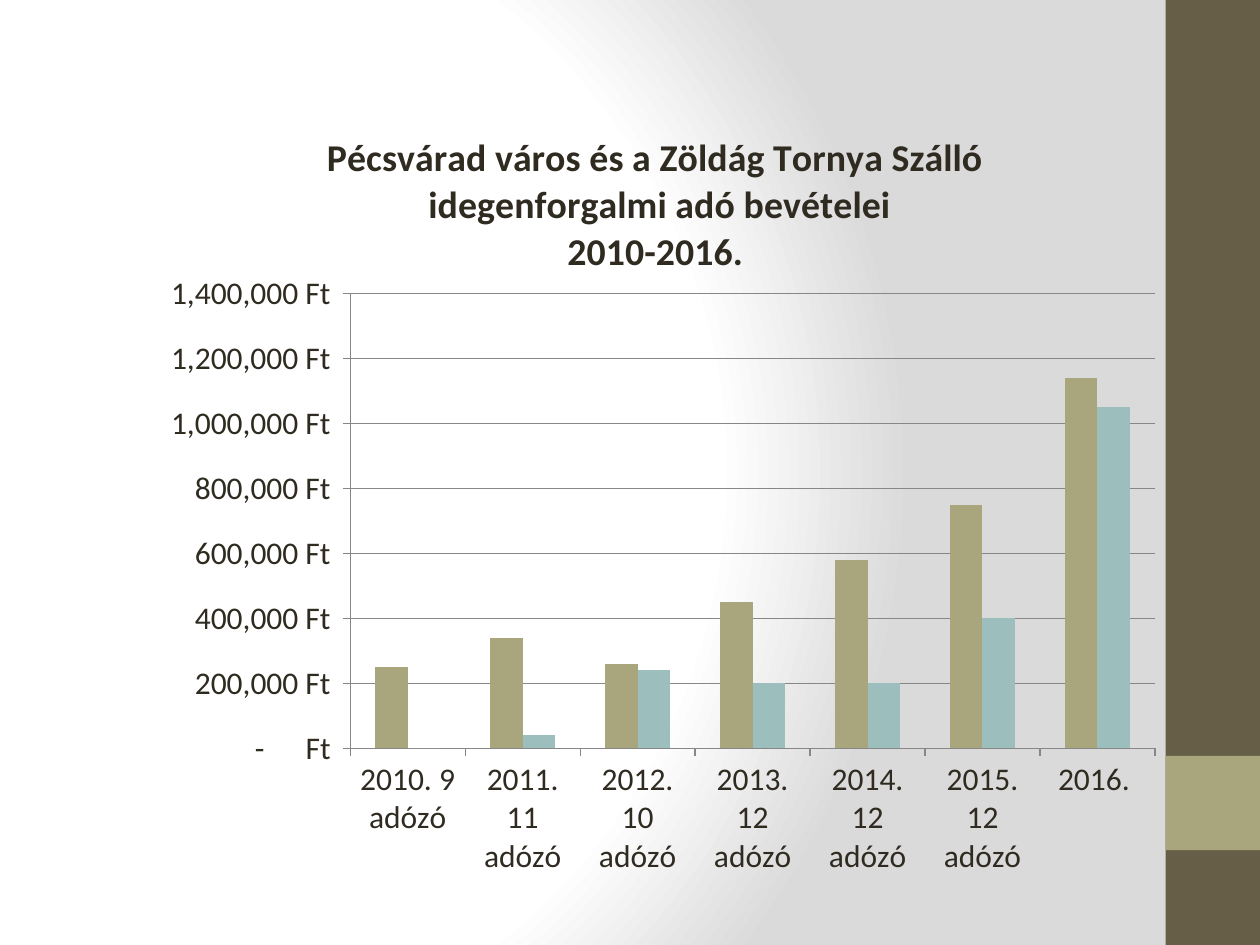
from lxml.etree import SubElement
from pptx import Presentation
from pptx.chart.data import CategoryChartData
from pptx.dml.color import RGBColor
from pptx.enum.chart import XL_CHART_TYPE, XL_TICK_MARK
from pptx.enum.shapes import MSO_SHAPE
from pptx.oxml import parse_xml
from pptx.oxml.ns import nsdecls, qn
from pptx.util import Cm, Pt

COLORS = {
    "text": "2F2B20",
    "band": "675E47",
    "olive": "A9A57C",
    "teal": "9CBEBD",
    "line": "878787",
    "white": "FFFFFF",
    "grey": "DADADA",
}
FT_FORMAT = r'_-* #,##0\ "Ft"_-;\-* #,##0\ "Ft"_-;_-* "-"??\ "Ft"_-;_-@_-'


class Deck:
    """Holds the style and the current slide."""

    font = "Calibri"
    size = Pt(18)
    title_size = Pt(21.6)

    def __init__(self, slide):
        self.s = slide

    def rgb(self, name):
        return RGBColor.from_string(COLORS[name])

    def background(self, stops):
        fill = self.s.background.fill
        fill.gradient()
        old = self.s.element.find(".//" + qn("a:gradFill"))
        gs = "".join(
            f'<a:gs pos="{pos * 1000}"><a:srgbClr val="{COLORS[c]}"/></a:gs>'
            for pos, c in stops)
        old.getparent().replace(old, parse_xml(
            f'<a:gradFill {nsdecls("a")} rotWithShape="1"><a:gsLst>{gs}</a:gsLst>'
            '<a:path path="circle"><a:fillToRect l="20000" t="50000" '
            'r="100000" b="50000"/></a:path></a:gradFill>'))

    def rect(self, x, y, w, h, color):
        sp = self.s.shapes.add_shape(
            MSO_SHAPE.RECTANGLE, Cm(x), Cm(y), Cm(w), Cm(h))
        sp.shadow.inherit = False
        sp.fill.solid()
        sp.fill.fore_color.rgb = self.rgb(color)
        sp.line.fill.background()

    def column_chart(self, x, y, w, h, cats, series, title, plot_box):
        data = CategoryChartData()
        data.categories = cats
        for name, values, _ in series:
            data.add_series(name, values)
        chart = self.s.shapes.add_chart(
            XL_CHART_TYPE.COLUMN_CLUSTERED, Cm(x), Cm(y), Cm(w), Cm(h), data).chart
        chart.has_legend = False
        chart.font.name = self.font
        chart.font.size = self.size
        chart.font.color.rgb = self.rgb("text")
        self.chart_title(chart, title)

        # Columns
        plot = chart.plots[0]
        plot.gap_width = 150
        plot.overlap = 0
        plot.vary_by_categories = False
        for ser, (_, _, color) in zip(plot.series, series):
            ser.format.fill.solid()
            ser.format.fill.fore_color.rgb = self.rgb(color)

        # Axes and gridlines
        val, cat = chart.value_axis, chart.category_axis
        val.minimum_scale, val.maximum_scale, val.major_unit = 0, 1400000, 200000
        val.has_major_gridlines = True
        val.tick_labels.number_format = FT_FORMAT
        val.tick_labels.number_format_is_linked = False
        for part in (val, cat, val.major_gridlines):
            part.format.line.color.rgb = self.rgb("line")
            part.format.line.width = Pt(0.75)
        for axis in (val, cat):
            axis.major_tick_mark = XL_TICK_MARK.OUTSIDE
        self.plot_layout(chart, plot_box)

    def chart_title(self, chart, lines):
        tf = chart.chart_title.text_frame
        chart.chart_title.include_in_layout = False
        for i, line in enumerate(lines):
            p = tf.paragraphs[0] if i == 0 else tf.add_paragraph()
            r = p.add_run()
            r.text = line
            r.font.name = self.font
            r.font.size = self.title_size
            r.font.bold = True
            r.font.color.rgb = self.rgb("text")

    def plot_layout(self, chart, box):
        area = chart.element.find(".//" + qn("c:plotArea"))
        for old in area.findall(qn("c:layout")):
            area.remove(old)
        layout = SubElement(area, qn("c:layout"))
        area.insert(0, layout)
        manual = SubElement(layout, qn("c:manualLayout"))
        settings = [("layoutTarget", "inner"), ("xMode", "edge"), ("yMode", "edge")]
        for tag, value in settings + list(zip("xywh", box)):
            SubElement(manual, qn(f"c:{tag}")).set("val", str(value))


def main():
    prs = Presentation()
    prs.slide_width, prs.slide_height = Cm(25.4), Cm(19.05)
    deck = Deck(prs.slides.add_slide(prs.slide_layouts[6]))

    # Background and side band
    deck.background([(0, "white"), (75, "white"), (100, "grey")])
    deck.rect(23.5, 0, 1.9, 19.05, "band")
    deck.rect(23.5, 15.24, 1.9, 1.9, "olive")

    # Tourist tax revenue by year
    deck.column_chart(
        2.9, 2.13, 20.8, 15.8,
        ["2010. 9 adózó", "2011. 11 adózó", "2012. 10 adózó", "2013. 12 adózó",
         "2014. 12 adózó", "2015. 12 adózó", "2016. "],
        [("Series 1", (250000, 340000, 260000, 450000, 580000, 750000, 1140000), "olive"),
         ("Series 2", (0, 40000, 240000, 200000, 200000, 400000, 1050000), "teal")],
        ["Pécsvárad város és a Zöldág Tornya Szálló ",
         "idegenforgalmi adó bevételei", "2010-2016. "],
        (0.2, 0.24, 0.78, 0.58))
    prs.save("out.pptx")


if __name__ == "__main__":
    main()
